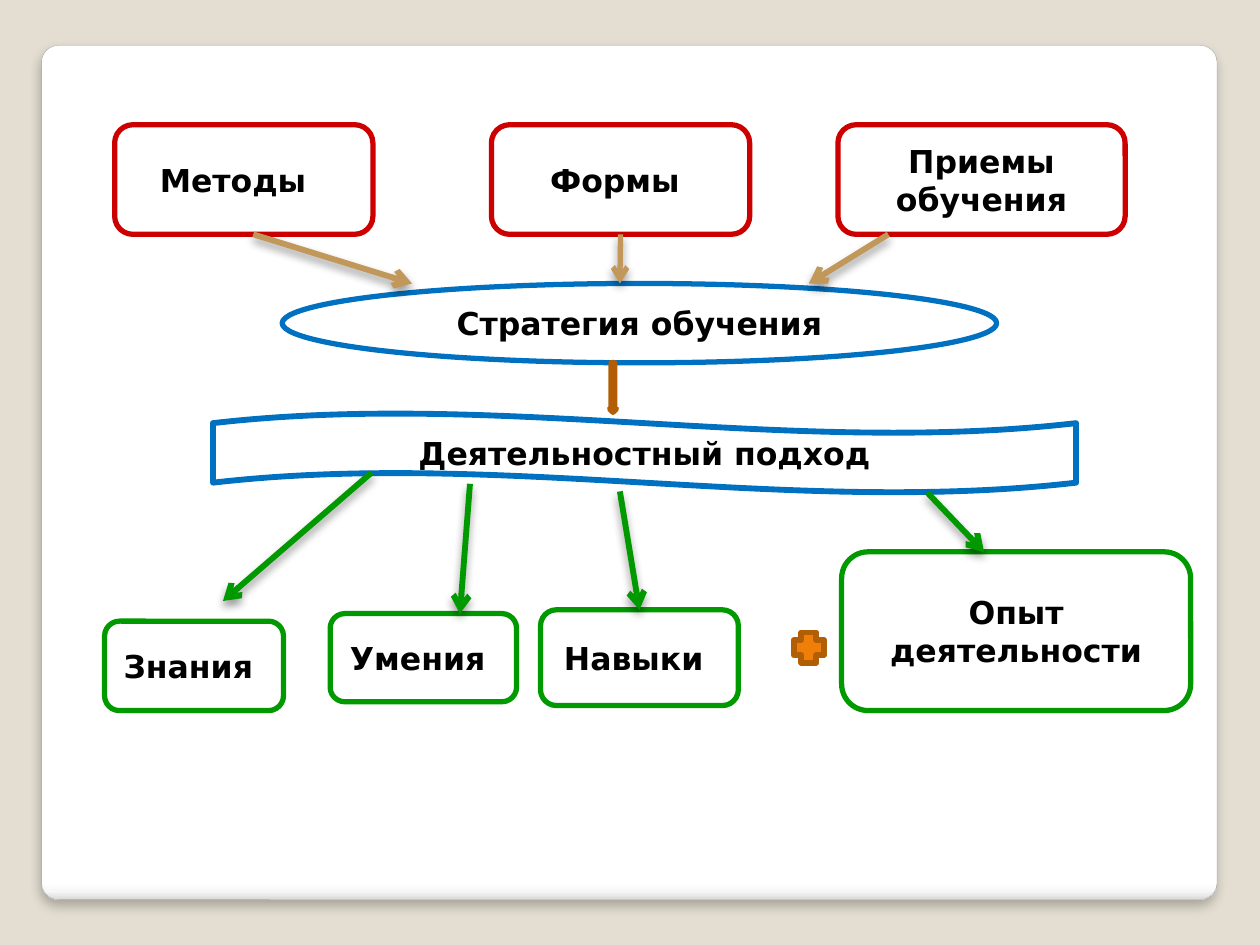
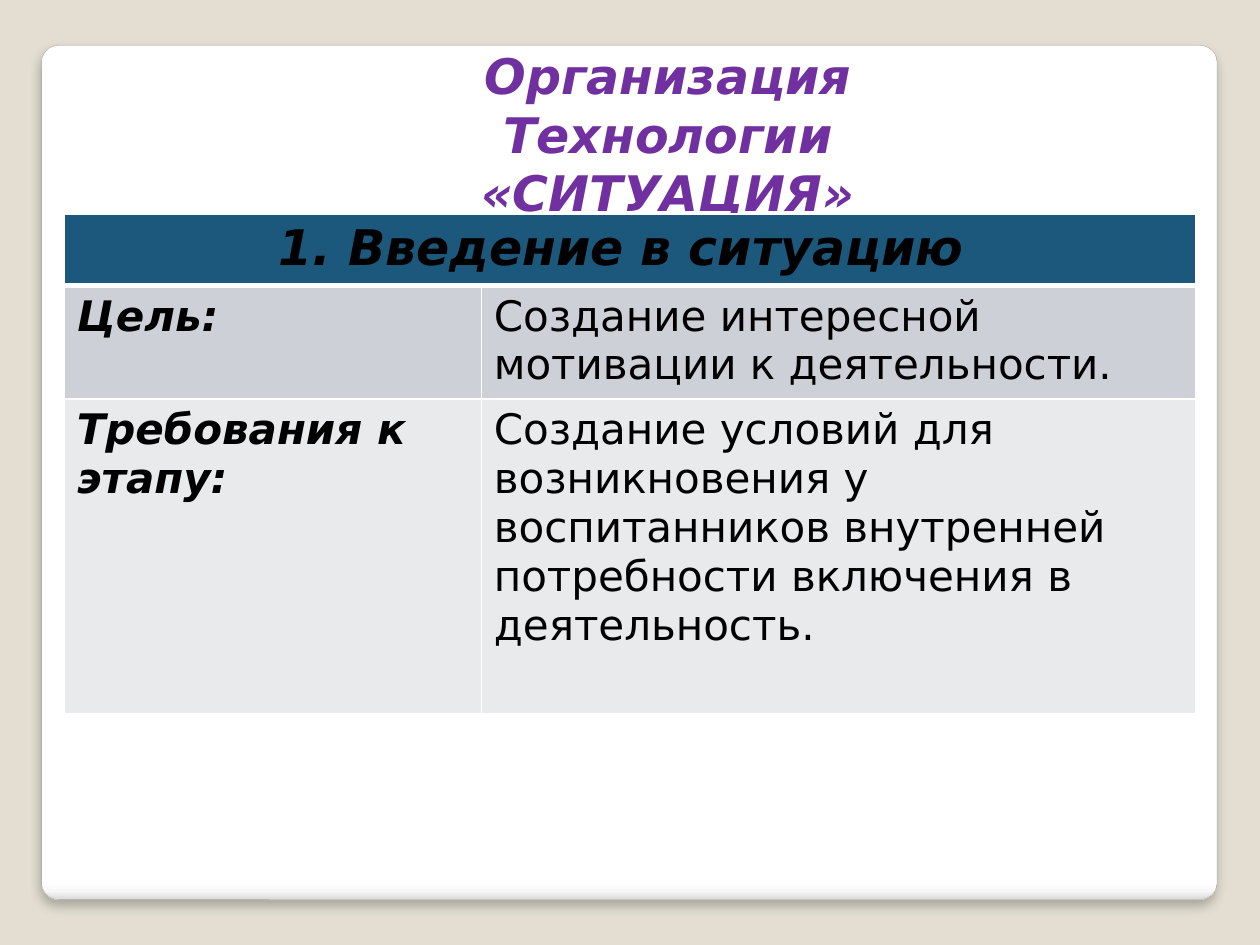
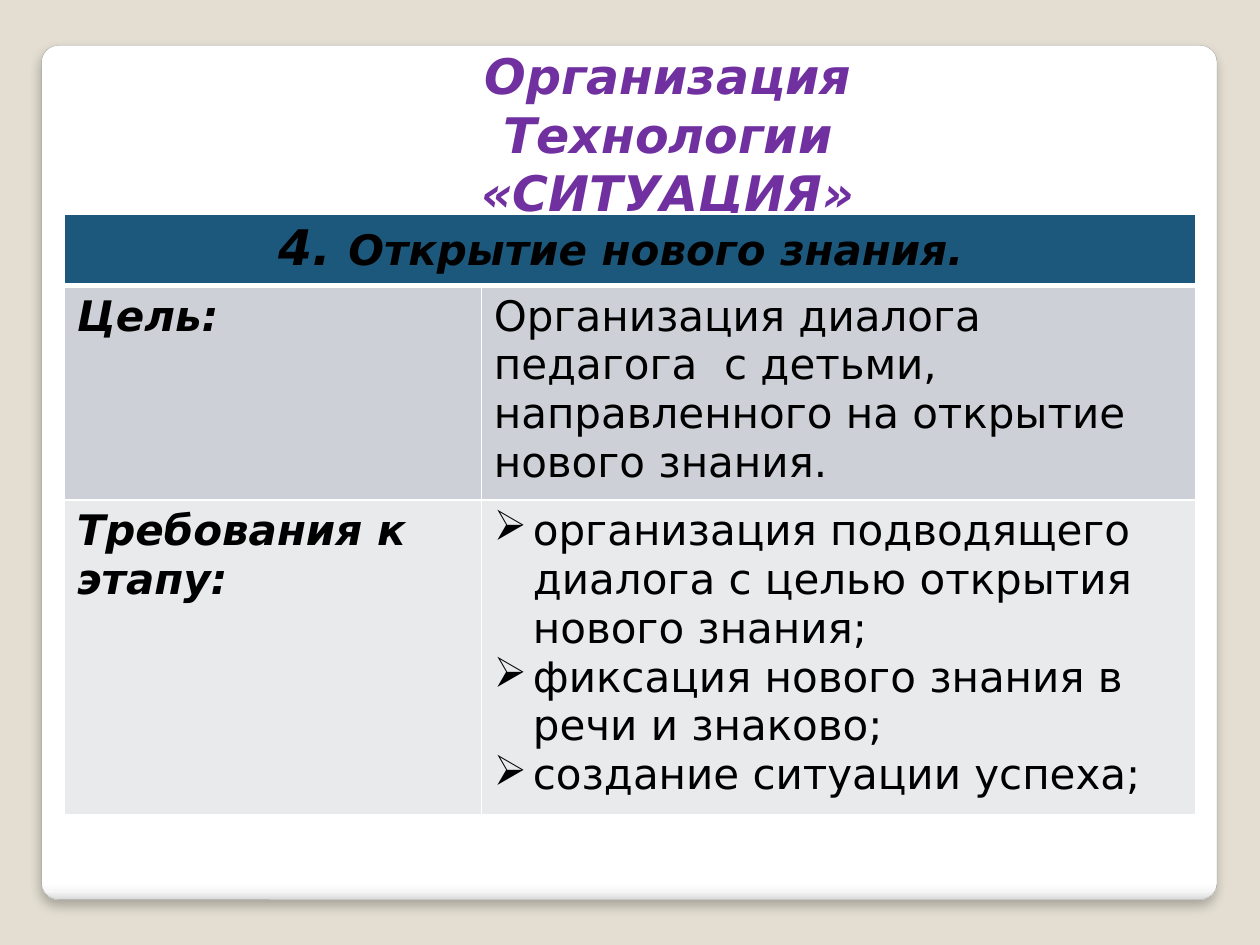
import dataclasses

import pptx
import pptx.dml.color
import pptx.enum.shapes
import pptx.enum.text
import pptx.oxml.ns
import pptx.util
from lxml import etree

Inches = pptx.util.Inches
Pt = pptx.util.Pt
qn = pptx.oxml.ns.qn
SHAPE = pptx.enum.shapes.MSO_SHAPE
ALIGN = pptx.enum.text.PP_ALIGN
ANCHOR = pptx.enum.text.MSO_ANCHOR


@dataclasses.dataclass(frozen=True)
class Theme:
    font: str = "DejaVu Sans"
    background: str = "E3DED1"
    card_edge: str = "A4A4A4"
    card_stops: tuple = ((0, "FFFFFF"), (98, "FFFFFF"), (99, "F7F7F7"), (100, "DADADA"))
    text: str = "000000"
    title: str = "7030A0"
    red: str = "CC0000"
    blue: str = "0070C0"
    green: str = "009900"
    tan: str = "C19859"
    orange: str = "F07F09"
    brown: str = "B25E07"
    header_fill: str = "1B587C"
    row_fills: tuple = ("CDD1D7", "E8EAEC")
    border: str = "FFFFFF"
    title_size: int = 28
    body_size: int = 24
    label_size: int = 18
    box_line: float = 3
    heavy_line: float = 3.35


def rgb(color):
    return pptx.dml.color.RGBColor.from_string(color)


def add_xml(parent, tag, **attrs):
    return etree.SubElement(parent, qn(tag), {k: str(v) for k, v in attrs.items()})


def add_color(parent, color):
    return add_xml(parent, "a:srgbClr", val=color)


class Deck:
    """Holds the theme and the current slide."""

    def __init__(self, theme):
        self.theme = theme
        self.prs = pptx.Presentation()
        self.prs.slide_width, self.prs.slide_height = Inches(10), Inches(7.5)
        fill = self.prs.slide_master.background.fill
        fill.solid()
        fill.fore_color.rgb = rgb(theme.background)
        self.s = None

    def new_slide(self):
        self.s = self.prs.slides.add_slide(self.prs.slide_layouts[6])
        self.card()

    def run(self, p, text, size, color=None, bold=False, italic=False):
        r = p.add_run()
        r.text = text
        f = r.font
        f.name, f.size, f.bold, f.italic = self.theme.font, Pt(size), bold, italic
        f.color.rgb = rgb(color or self.theme.text)

    def shadow(self, sp, alpha, blur, dist):
        """Soft shadow cast straight down."""
        sp_pr = sp._element.spPr
        effects = sp_pr.find(qn("a:effectLst"))
        if effects is None:
            effects = add_xml(sp_pr, "a:effectLst")
        outer = add_xml(effects, "a:outerShdw", blurRad=Pt(blur), dist=Pt(dist),
                        dir=90 * 60000, algn="t", rotWithShape=0)
        add_xml(add_color(outer, "000000"), "a:alpha", val=alpha * 1000)

    def shape(self, kind, x, y, w, h, line, width, fill=None):
        sp = self.s.shapes.add_shape(kind, Inches(x), Inches(y), Inches(w), Inches(h))
        sp.shadow.inherit = False
        if fill:
            sp.fill.solid()
            sp.fill.fore_color.rgb = rgb(fill)
        else:
            sp.fill.background()
        sp.line.color.rgb = rgb(line)
        sp.line.width = Pt(width)
        return sp

    def card(self):
        """White rounded sheet under every slide."""
        sp = self.shape(SHAPE.ROUNDED_RECTANGLE, 0.33, 0.36, 9.33, 6.78,
                        self.theme.card_edge, 0.16)
        sp.adjustments[0] = 0.02
        sp.fill.gradient()
        sp.fill.gradient_angle = 270
        stops = sp._element.spPr.find(".//" + qn("a:gsLst"))
        stops.clear()
        for pos, color in self.theme.card_stops:
            add_color(add_xml(stops, "a:gs", pos=pos * 1000), color)
        self.shadow(sp, 25, 6, 4)

    def label(self, kind, text, x, y, w, h, line, width=None, shift=0):
        """Outlined shape with a bold label; shift widens the right inset."""
        sp = self.shape(kind, x, y, w, h, line, width or self.theme.box_line)
        tf = sp.text_frame
        tf.word_wrap = True
        tf.vertical_anchor = ANCHOR.MIDDLE
        tf.margin_left, tf.margin_right = Inches(0.05), Inches(0.05 + shift)
        p = tf.paragraphs[0]
        p.alignment = ALIGN.CENTER
        self.run(p, text, self.theme.label_size, bold=True)
        return sp

    def arrow(self, start, end, color, width=None, from_box=None, to_box=None):
        c = self.s.shapes.add_connector(pptx.enum.shapes.MSO_CONNECTOR.STRAIGHT,
                                        *map(Inches, start + end))
        if from_box is not None:
            c.begin_connect(from_box, 2)
        if to_box is not None:
            c.end_connect(to_box, 0)
        c.line.color.rgb = rgb(color)
        c.line.width = Pt(width or self.theme.heavy_line)
        add_xml(c.line._get_or_add_ln(), "a:tailEnd", type="arrow")
        self.shadow(c, 40, 5.2, 3)

    def title(self, *lines):
        box = self.s.shapes.add_textbox(Inches(3.06), Inches(0.31), Inches(4.48), Inches(1.04))
        tf = box.text_frame
        tf.word_wrap = True
        for i, line in enumerate(lines):
            p = tf.add_paragraph() if i else tf.paragraphs[0]
            p.alignment = ALIGN.CENTER
            self.run(p, line, self.theme.title_size, self.theme.title, True, True)

    def style_cell(self, cell, fill, bottom=1):
        tc_pr = cell._tc.get_or_add_tcPr()
        for side, width in (("L", 1), ("R", 1), ("T", 1), ("B", bottom)):
            ln = add_xml(tc_pr, "a:ln" + side, w=Pt(width))
            add_color(add_xml(ln, "a:solidFill"), self.theme.border)
        cell.fill.solid()
        cell.fill.fore_color.rgb = rgb(fill)

    def bullet(self, p):
        p_pr = p._p.get_or_add_pPr()
        p_pr.set("marL", str(Inches(0.31)))
        p_pr.set("indent", str(-Inches(0.31)))
        add_xml(p_pr, "a:buChar", char="➢")

    def stage_table(self, heading, rows, heights):
        """heading: (text, size) runs; rows: (name, paragraphs), bulleted if several."""
        t = self.theme
        table = self.s.shapes.add_table(len(heights), 2, Inches(0.51), Inches(1.7),
                                        Inches(8.98), Inches(sum(heights))).table
        for col, width in zip(table.columns, (3.31, 5.67)):
            col.width = Inches(width)
        for row, height in zip(table.rows, heights):
            row.height = Inches(height)

        # Heading across both columns
        head = table.cell(0, 0)
        head.merge(table.cell(0, 1))
        for cell in table.rows[0].cells:
            self.style_cell(cell, t.header_fill, bottom=3)
        head.margin_right = Inches(0.24)
        p = head.text_frame.paragraphs[0]
        p.alignment = ALIGN.CENTER
        for text, size in heading:
            self.run(p, text, size, bold=True, italic=True)

        # Named rows
        for i, (name, paragraphs) in enumerate(rows, 1):
            name_cell, text_cell = table.cell(i, 0), table.cell(i, 1)
            for cell in (name_cell, text_cell):
                self.style_cell(cell, t.row_fills[i - 1])
            self.run(name_cell.text_frame.paragraphs[0], name, t.body_size, bold=True, italic=True)
            tf = text_cell.text_frame
            for j, text in enumerate(paragraphs):
                p = tf.add_paragraph() if j else tf.paragraphs[0]
                if len(paragraphs) > 1:
                    self.bullet(p)
                self.run(p, text, t.body_size)


def strategy_slide(d):
    t = d.theme
    box = SHAPE.ROUNDED_RECTANGLE
    d.new_slide()

    # Means of teaching
    top, height = 0.99, 0.87
    d.label(box, "Методы", 0.91, top, 2.05, height, t.red, shift=0.17)
    forms = d.label(box, "Формы", 3.9, top, 2.05, height, t.red, shift=0.09)
    d.label(box, "Приемы обучения", 6.65, top, 2.28, height, t.red)

    # Strategy and approach
    d.label(SHAPE.OVAL, "Стратегия обучения", 2.24, 2.25, 5.67, 0.63, t.blue)
    d.label(SHAPE.WAVE, "Деятельностный подход", 1.69, 3.28, 6.85, 0.63, t.blue, t.heavy_line)

    # Results
    d.label(box, "Знания", 0.83, 4.93, 1.42, 0.71, t.green, shift=0.09)
    d.label(box, "Умения", 2.62, 4.87, 1.48, 0.7, t.green, shift=0.09)
    skills = d.label(box, "Навыки", 4.29, 4.84, 1.57, 0.76, t.green, shift=0.09)
    d.label(box, "Опыт деятельности", 6.68, 4.38, 2.77, 1.26, t.green)

    # Arrows into the strategy
    d.arrow((2.01, 1.86), (3.27, 2.25), t.tan)
    d.arrow((4.92, 1.86), (4.92, 2.25), t.tan, t.box_line, from_box=forms)
    d.arrow((7.05, 1.86), (6.42, 2.25), t.tan)
    d.shape(SHAPE.DOWN_ARROW, 4.84, 2.88, 0.05, 0.39, t.brown, t.heavy_line, t.orange)

    # Arrows to the results
    d.arrow((2.95, 3.75), (1.77, 4.77), t.green)
    d.arrow((3.73, 3.84), (3.65, 4.87), t.green)
    d.arrow((4.92, 3.9), (5.08, 4.84), t.green, to_box=skills)
    d.shape(SHAPE.CROSS, 6.3, 5.02, 0.24, 0.24, t.brown, t.heavy_line, t.orange)
    d.arrow((7.36, 3.91), (7.81, 4.38), t.green)


def stage_slide(d, heading, goal, demands, goal_height):
    d.new_slide()
    d.title("Организация", "Технологии «СИТУАЦИЯ»")
    rows = (("Цель:", (goal,)), ("Требования к этапу:", demands))
    d.stage_table(heading, rows, (0.56, goal_height, 2.5))


def main():
    t = Theme()
    d = Deck(t)
    strategy_slide(d)
    stage_slide(
        d, (("1. Введение в ситуацию", t.title_size),),
        "Создание интересной мотивации к деятельности.",
        ("Создание условий для возникновения у воспитанников внутренней "
         "потребности включения в деятельность.",),
        0.9)
    stage_slide(
        d, (("4. ", t.title_size), ("Открытие нового знания.", t.body_size)),
        "Организация диалога педагога  с детьми, направленного на открытие нового знания.",
        ("организация подводящего диалога с целью открытия нового знания;",
         "фиксация нового знания в речи и знаково;",
         "создание ситуации успеха;"),
        1.7)
    d.prs.save("out.pptx")


if __name__ == "__main__":
    main()
